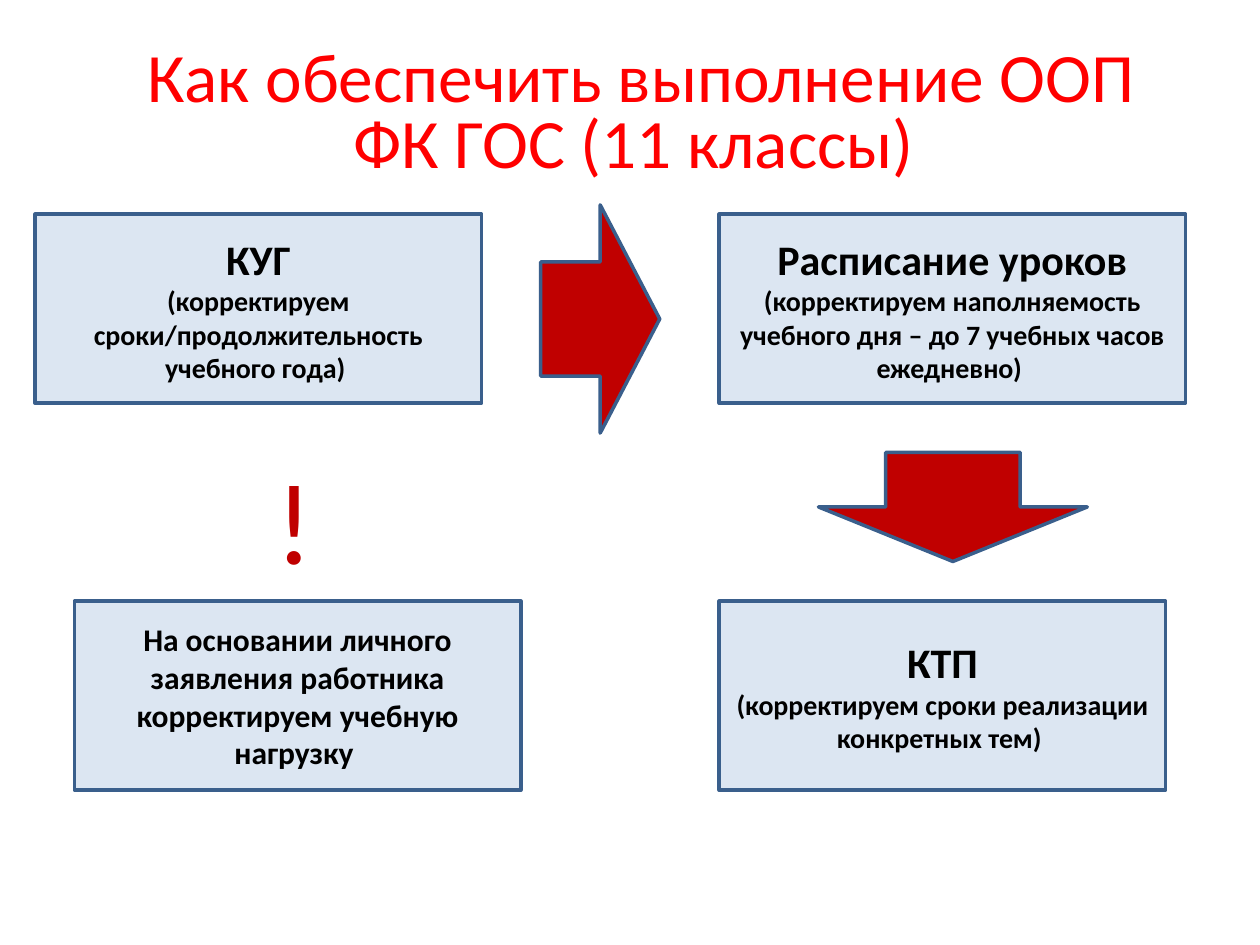
from pptx import Presentation
from pptx.dml.color import RGBColor
from pptx.enum.shapes import MSO_SHAPE
from pptx.enum.text import MSO_ANCHOR, PP_ALIGN
from pptx.util import Cm, Pt

RED, DARK_RED, BLACK = "FF0000", "C00000", "000000"
PALE_BLUE, BLUE = "DCE6F2", "3A5F8C"

LEFT, RIGHT = 1.5, 14.5
TOP_ROW, BOTTOM_ROW = 4.32, 12.12
BOX_WIDTH, BOX_HEIGHT = 9, 3.81


def color(value):
    return RGBColor.from_string(value)


def write(para, text, size=18, fill=BLACK, bold=False, align=PP_ALIGN.CENTER,
          spacing=None, font="Calibri"):
    """Add the text to a paragraph; a newline becomes a line break."""
    para.alignment = align
    para.line_spacing = spacing
    for number, line in enumerate(text.split("\n")):
        if number:
            para.add_line_break()
        span = para.add_run()
        span.text = line
        span.font.name = font
        span.font.size = Pt(size)
        span.font.bold = bold
        span.font.color.rgb = color(fill)


class SlideBuilder:
    def __init__(self, deck):
        self.page = deck.slides.add_slide(deck.slide_layouts[5])
        self.line_color, self.line_width = BLUE, Pt(2)

    def title(self, text, left, top, width, height):
        box = self.page.shapes.title
        box.left, box.top, box.width, box.height = map(Cm, (left, top, width, height))
        box.text_frame.word_wrap = True
        box.text_frame.vertical_anchor = MSO_ANCHOR.MIDDLE
        write(box.text_frame.paragraphs[0], text, size=39.6, fill=RED, spacing=0.8)

    def shape(self, kind, left, top, width, height, fill):
        shape = self.page.shapes.add_shape(kind, *map(Cm, (left, top, width, height)))
        shape.shadow.inherit = False
        shape.fill.solid()
        shape.fill.fore_color.rgb = color(fill)
        shape.line.color.rgb = color(self.line_color)
        shape.line.width = self.line_width
        return shape

    def box(self, left, top, *lines, width=BOX_WIDTH):
        """Draw a bordered box; each line is a (text, size) pair."""
        box = self.shape(MSO_SHAPE.RECTANGLE, left, top, width, BOX_HEIGHT, PALE_BLUE)
        frame = box.text_frame
        frame.word_wrap = True
        frame.vertical_anchor = MSO_ANCHOR.MIDDLE
        for number, (text, size) in enumerate(lines):
            para = frame.add_paragraph() if number else frame.paragraphs[0]
            write(para, text, size=size, bold=True)

    def arrow(self, left, top, width, height, rotation=0):
        arrow = self.shape(MSO_SHAPE.DOWN_ARROW, left, top, width, height, DARK_RED)
        arrow.rotation = rotation

    def label(self, text, left, top, width, height, **style):
        box = self.page.shapes.add_textbox(*map(Cm, (left, top, width, height)))
        box.text_frame.word_wrap = True
        write(box.text_frame.paragraphs[0], text, **style)


def main():
    deck = Presentation()
    deck.slide_width, deck.slide_height = Cm(25.4), Cm(19.05)
    slide = SlideBuilder(deck)

    slide.title("Как обеспечить выполнение ООП\nФК ГОС (11 классы) ",
                LEFT, 0.74, 22.86, 3.18)
    slide.box(0.71, TOP_ROW, ("КУГ", 24),
              ("(корректируем сроки/продолжительность учебного года) ", 16))
    slide.box(RIGHT, BOTTOM_ROW, ("КТП", 24),
              ("(корректируем сроки реализации конкретных тем) ", 16))
    slide.arrow(9.8, 5.23, 4.6, 2.4, rotation=270)
    slide.box(RIGHT, TOP_ROW, ("Расписание уроков", 24),
              ("(корректируем наполняемость учебного дня – до 7 учебных часов "
               "ежедневно) ", 16), width=9.4)
    slide.arrow(16.5, 9.12, 5.42, 2.2)
    slide.label("!", 5.3, 8.92, 1.4, 3.07, size=66, fill=DARK_RED,
                align=PP_ALIGN.LEFT)
    slide.box(LEFT, BOTTOM_ROW,
              ("На основании личного заявления работника корректируем учебную "
               "нагрузку ", 18))

    deck.save("out.pptx")


if __name__ == "__main__":
    main()
